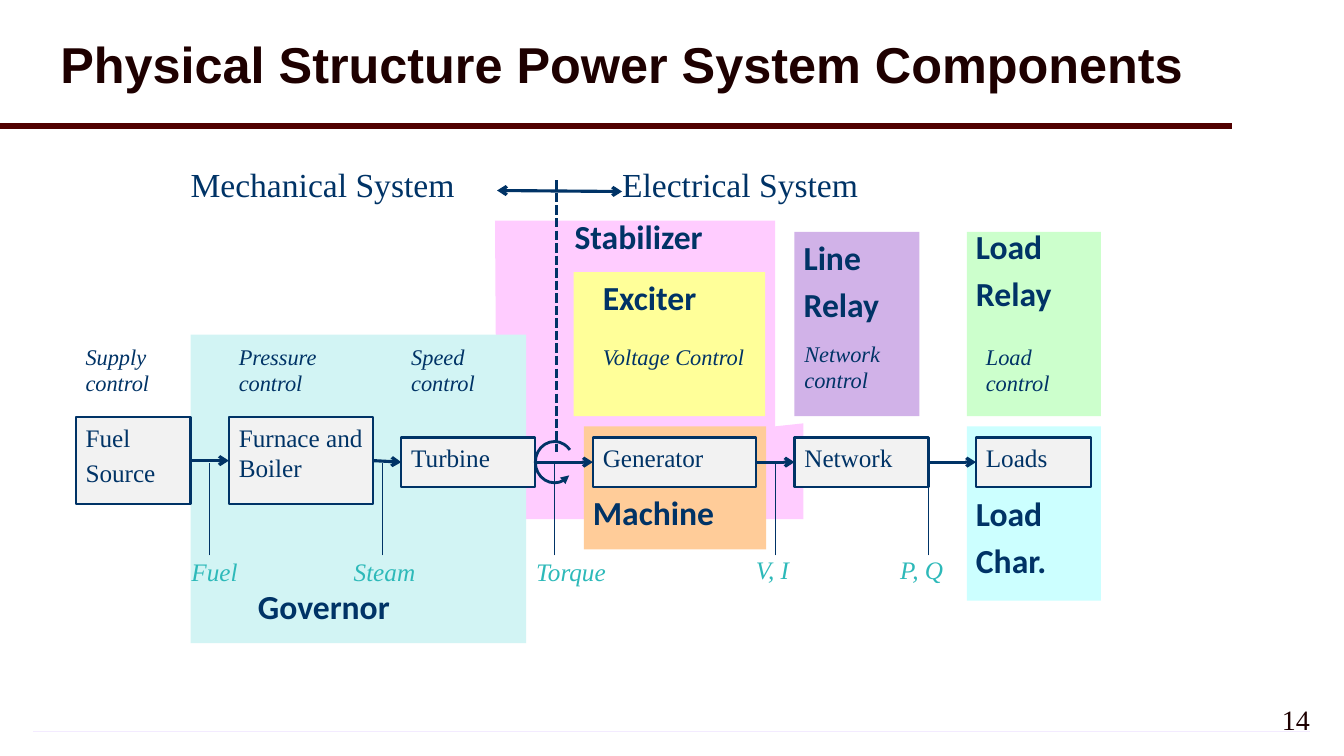
from dataclasses import dataclass
from itertools import pairwise

from lxml.etree import SubElement
from pptx import Presentation
from pptx.dml.color import RGBColor
from pptx.enum.dml import MSO_LINE
from pptx.enum.shapes import MSO_CONNECTOR, MSO_SHAPE
from pptx.enum.text import MSO_ANCHOR, PP_ALIGN
from pptx.oxml.ns import qn
from pptx.util import Inches, Pt


@dataclass(frozen=True)
class Theme:
    """Colours, fonts and type sizes of the slide."""
    ink: str = "003366"
    dark: str = "1E0000"
    rule: str = "500000"
    signal: str = "2DB9B9"
    component: str = "F2F2F2"
    stabilizer: str = "FFCCFF"
    line_relay: str = "D1B2E8"
    load_relay: str = "CCFFCC"
    load_char: str = "CCFFFF"
    governor: str = "D2F4F4"
    exciter: str = "FFFF99"
    machine: str = "FFCC99"
    footer: tuple = ("CC99FF", "F3EBFF")
    heading: str = "Arial"
    serif: str = "Times New Roman"
    sans: str = "Calibri"
    title_size: int = 36
    zone_size: int = 24
    number_size: int = 20
    body_size: int = 18
    control_size: int = 16


T = Theme()


def rgb(value):
    """Return a colour from its hex value."""
    return RGBColor.from_string(value)


def write(sp, text, size, font=T.serif, color=T.ink, bold=False, italic=False,
          inset=0.1, align=PP_ALIGN.LEFT):
    """Fill a shape with top-anchored, wrapped text."""
    tf = sp.text_frame
    tf.text = text
    tf.word_wrap = True
    tf.vertical_anchor = MSO_ANCHOR.TOP
    tf.margin_left = tf.margin_right = Inches(inset)
    for i, p in enumerate(tf.paragraphs):
        p.alignment = align
        if i:
            p.space_before = Pt(size * 0.2)
        for r in p.runs:
            r.font.size, r.font.name = Pt(size), font
            r.font.bold, r.font.italic = bold, italic
            r.font.color.rgb = rgb(color)
    return tf


def label(s, box, text, size, **style):
    """Place a text box."""
    sp = s.shapes.add_textbox(*map(Inches, box))
    return write(sp, text, size, **style)


def rect(s, box, fill, line=None):
    """Place a flat rectangle, outlined if a line colour is given."""
    sp = s.shapes.add_shape(MSO_SHAPE.RECTANGLE, *map(Inches, box))
    sp.shadow.inherit = False
    sp.fill.solid()
    sp.fill.fore_color.rgb = rgb(fill)
    if line:
        sp.line.color.rgb = rgb(line)
        sp.line.width = Pt(1.5)
    else:
        sp.line.fill.background()
    return sp


def arrowheads(sp, **ends):
    """Add arrowheads to the headEnd or tailEnd of a line."""
    ln = sp.line._get_or_add_ln()
    for end, kind in ends.items():
        SubElement(ln, qn(f"a:{end}"), type=kind)


def connect(s, x1, y1, x2, y2, width=2.25, color=T.ink, dash=None, **ends):
    """Draw a straight line between two points."""
    c = s.shapes.add_connector(MSO_CONNECTOR.STRAIGHT, *map(Inches, (x1, y1, x2, y2)))
    c.line.color.rgb = rgb(color)
    c.line.width = Pt(width)
    if dash:
        c.line.dash_style = dash
    arrowheads(c, **ends)
    SubElement(c._element.spPr, qn("a:effectLst"))


def header(s, x, y, w, h):
    """Draw the title and the rule below it."""
    tf = label(s, (x, y, w, h), "Physical Structure Power System Components",
               T.title_size, font=T.heading, color=T.dark, bold=True)
    tf.vertical_anchor = MSO_ANCHOR.MIDDLE
    tf.paragraphs[0].line_spacing = 0.9
    connect(s, 0, y + h, w, y + h, 4, T.rule)


def footer(s, x, y, w, h):
    """Draw the bottom rule and the slide number."""
    sp = rect(s, (x, y + 0.33, w, 0.01), T.footer[0])
    sp.fill.gradient()
    for stop, color in zip(sp.fill.gradient_stops, T.footer):
        stop.color.rgb = rgb(color)
    label(s, (x + 12.09, y, 0.67, h), "14", T.number_size, color=T.dark,
          align=PP_ALIGN.RIGHT)


def zones(s, x, y):
    """Draw the coloured control zones with their names."""
    outline = [(7.22, 3.57), (7.22, 2.62), (6.94, 2.65), (6.94, 0.61),
               (4.16, 0.61), (4.18, 3.57)]
    points = [(Inches(x + px), Inches(y + py)) for px, py in outline]
    builder = s.shapes.build_freeform(*points[0], scale=1.0)
    builder.add_line_segments(points[1:], close=True)
    sp = builder.convert_to_shape()
    sp.shadow.inherit = False
    sp.fill.solid()
    sp.fill.fore_color.rgb = rgb(T.stabilizer)
    sp.line.fill.background()

    areas = [
        ("Line\nRelay", T.line_relay, (7.13, 0.72, 1.24, 1.83), (0.09, 0, 0.95, 1.11), 0),
        ("Load\nRelay", T.load_relay, (8.84, 0.72, 1.33, 1.83), (0.09, -0.11, 1.14, 1.11), 0),
        ("Load\nChar.", T.load_char, (8.84, 2.65, 1.33, 1.73), (0.09, 0.61, 1.14, 1.11), 0),
        ("Governor", T.governor, (1.14, 1.74, 3.33, 3.06), (0.57, 2.44, 2.57, 0.62), 0.1),
        ("Exciter", T.exciter, (4.94, 1.12, 1.9, 1.43), (0.19, 0, 1.62, 0.62), 0.1),
        ("Machine", T.machine, (5.04, 2.65, 1.81, 1.22), (0.09, 0.6, 1.62, 0.62), 0),
    ]
    style = dict(size=T.zone_size, font=T.sans, bold=True)
    for name, fill, (zx, zy, zw, zh), (dx, dy, w, h), inset in areas:
        rect(s, (x + zx, y + zy, zw, zh), fill)
        label(s, (x + zx + dx, y + zy + dy, w, h), name, inset=inset, **style)
    label(s, (x + 4.85, y + 0.51, 1.81, 0.62), "Stabilizer", **style)


def components(s, x, y):
    """Draw the chain of components, their controls and the flow arrows."""
    chain = [
        ("Fuel\nSource", 0, 1.14, 2.56, 0.86, "Supply control", 1.14),
        ("Furnace and Boiler", 1.52, 1.43, 2.56, 0.86, "Pressure control", 1.43),
        ("Turbine", 3.23, 1.33, 2.76, 0.49, "Speed control", 1.14),
        ("Generator", 5.13, 1.62, 2.76, 0.49, "Voltage Control", 1.62),
        ("Network", 7.13, 1.33, 2.76, 0.49, "Network control", 1.24),
        ("Loads", 8.93, 1.14, 2.76, 0.49, "Load control", 1.14),
    ]
    for name, cx, w, cy, h, control, control_w in chain:
        write(rect(s, (x + cx, y + cy, w, h), T.component, T.ink), name, T.body_size)
        control_y = 1.74 if name == "Network" else 1.77
        label(s, (x + cx, y + control_y, control_w, 0.78), control,
              T.control_size, italic=True)
    for (_, ax, aw, ay, ah, *_), (_, bx, _, by, bh, *_) in pairwise(chain):
        connect(s, x + ax + aw, y + ay + ah / 2, x + bx, y + by + bh / 2,
                tailEnd="arrow")


def signals(s, x, y):
    """Draw the taps on the flow, their quantities and the shaft rotation."""
    taps = [("Fuel", 1.33, 1.05, 3.89, 1.05), ("Steam", 3.04, 2.66, 3.89, 1.43),
            ("Torque", 4.75, 4.47, 3.89, 1.28), ("V, I", 6.94, 6.65, 3.87, 0.76),
            ("P, Q", 8.46, 8.08, 3.87, 0.76)]
    for name, tap, left, top, w in taps:
        connect(s, x + tap, y + 3.93, x + tap, y + 3.01, 0.75)
        label(s, (x + left, y + top, w, 0.49), name, T.body_size,
              color=T.signal, italic=True)
    arc = s.shapes.add_shape(MSO_SHAPE.ARC, *map(Inches, (x + 4.56, y + 2.8, 0.38, 0.41)))
    arc.shadow.inherit = False
    arc.fill.background()
    arc.adjustments[0], arc.adjustments[1] = 25.213, 192.864
    arc.line.color.rgb = rgb(T.ink)
    arc.line.width = Pt(2)
    arrowheads(arc, headEnd="triangle")


def divide(s, x, y):
    """Draw the boundary between the mechanical and electrical systems."""
    connect(s, x + 4.77, y + 0.21, x + 4.77, y + 2.9, dash=MSO_LINE.SQUARE_DOT)
    for name, left, w in (("Mechanical System", 1.14, 3.04),
                          ("Electrical System", 5.42, 3.42)):
        label(s, (x + left, y, w, 0.62), name, T.zone_size, inset=0)
    connect(s, x + 4.18, y + 0.31, x + 5.42, y + 0.32,
            headEnd="arrow", tailEnd="arrow")


def main():
    """Build the slide and save it."""
    prs = Presentation()
    prs.slide_width, prs.slide_height = Inches(13.33), Inches(7.5)
    s = prs.slides.add_slide(prs.slide_layouts[6])
    header(s, 0.5, 0.08, 12.22, 1.17)
    for region in (zones, components, signals, divide):
        region(s, 0.75, 1.58)
    footer(s, 0.33, 6.92, 12.66, 0.5)
    prs.save("out.pptx")


if __name__ == "__main__":
    main()
